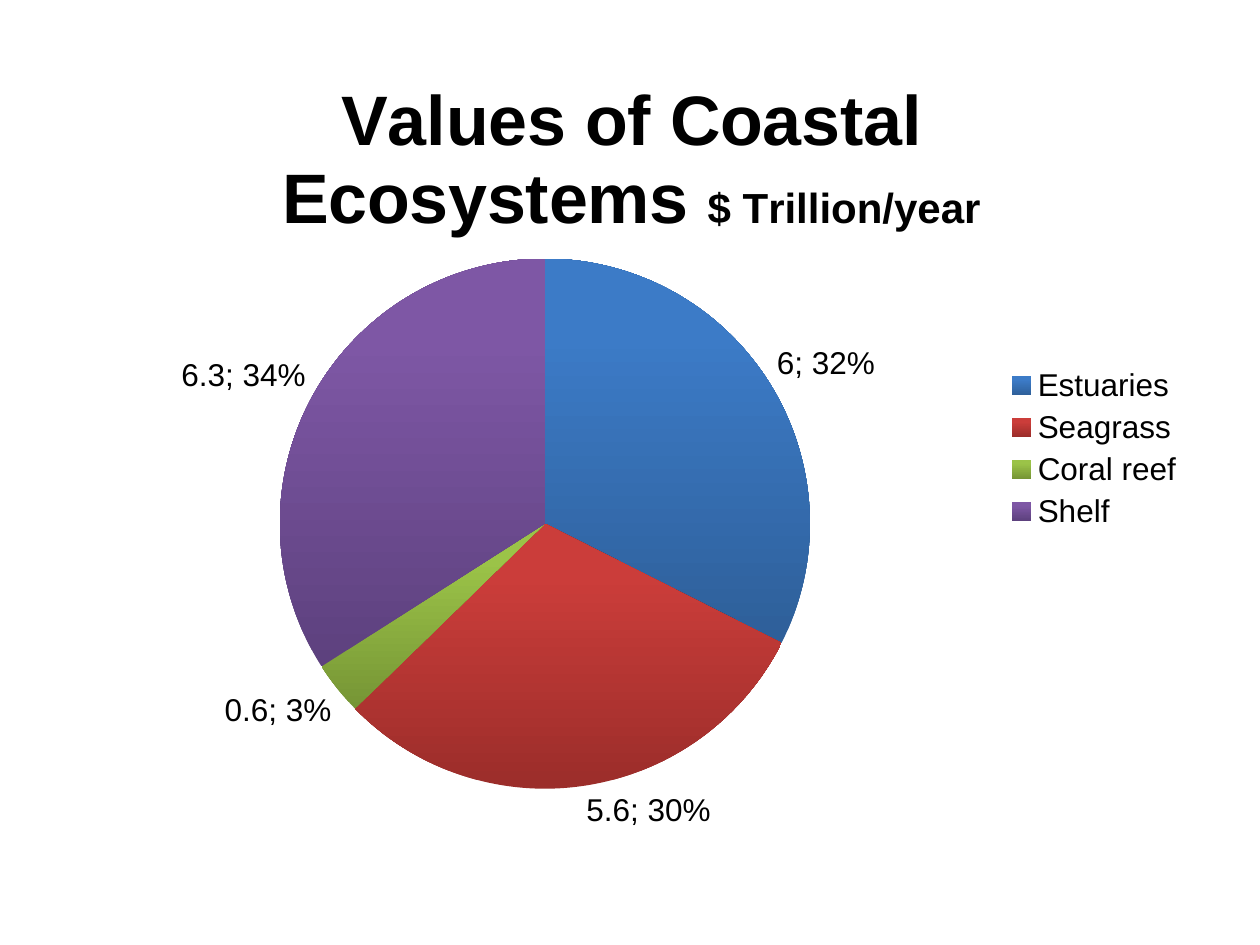
"""Build a slide with a pie chart of the values of coastal ecosystems."""
from dataclasses import dataclass

from lxml.etree import SubElement
from pptx import Presentation
from pptx.chart.chart import Chart
from pptx.chart.data import CategoryChartData
from pptx.dml.color import RGBColor
from pptx.enum.chart import XL_CHART_TYPE, XL_LABEL_POSITION, XL_LEGEND_POSITION
from pptx.oxml.ns import qn
from pptx.util import Inches, Pt

BLACK = RGBColor(0x00, 0x00, 0x00)
FONT = "Arial"


@dataclass
class Ecosystem:
    name: str
    value: float
    dark: RGBColor
    light: RGBColor


ECOSYSTEMS = [
    Ecosystem("Estuaries", 6, RGBColor(0x2E, 0x5F, 0x99), RGBColor(0x3C, 0x7B, 0xC7)),
    Ecosystem("Seagrass", 5.6, RGBColor(0x9B, 0x2D, 0x2A), RGBColor(0xCB, 0x3D, 0x3A)),
    Ecosystem("Coral reef", 0.6, RGBColor(0x76, 0x95, 0x35), RGBColor(0x9B, 0xC3, 0x48)),
    Ecosystem("Shelf", 6.3, RGBColor(0x5D, 0x41, 0x7E), RGBColor(0x7E, 0x57, 0xA5)),
]


def place(parent, index: int, **settings: str | float) -> None:
    """Give a chart part a manual layout as fractions of the chart."""
    for old in parent.findall(qn("c:layout")):
        parent.remove(old)
    layout = SubElement(parent, qn("c:layout"))
    parent.insert(index, layout)
    manual = SubElement(layout, qn("c:manualLayout"))
    for name, value in settings.items():
        SubElement(manual, qn(f"c:{name}")).set("val", str(value))


def add_title(chart: Chart) -> None:
    """Write the title with its smaller unit."""
    paragraph = chart.chart_title.text_frame.paragraphs[0]
    for text, size in (("Values of Coastal Ecosystems ", 40), ("$ Trillion/year", 24)):
        span = paragraph.add_run()
        span.text = text
        span.font.name = FONT
        span.font.size = Pt(size)
        span.font.bold = True
        span.font.color.rgb = BLACK
    chart.chart_title.include_in_layout = False
    place(chart.chart_title._element, 1, xMode="edge", yMode="edge", x=0.19, y=0.03)


def color_slices(chart: Chart) -> None:
    """Shade each slice from dark at the bottom to light at the top."""
    points = chart.plots[0].series[0].points
    for index, ecosystem in enumerate(ECOSYSTEMS):
        fill = points[index].format.fill
        fill.gradient()
        fill.gradient_angle = 90
        dark, light = fill.gradient_stops
        dark.color.rgb, dark.position = ecosystem.dark, 0
        light.color.rgb, light.position = ecosystem.light, 0.8


def add_labels(chart: Chart) -> None:
    """Show value and percentage outside each slice."""
    labels = chart.plots[0].series[0].data_labels
    labels.show_value = True
    labels.show_percentage = True
    labels.position = XL_LABEL_POSITION.OUTSIDE_END
    labels.font.name = FONT
    labels.font.size = Pt(18)
    labels.font.color.rgb = BLACK
    separator = SubElement(labels._element, qn("c:separator"))
    separator.text = "; "
    labels._element.find(qn("c:showBubbleSize")).addnext(separator)


def add_legend(chart: Chart) -> None:
    """List the ecosystems to the right of the pie."""
    chart.has_legend = True
    chart.legend.position = XL_LEGEND_POSITION.RIGHT
    chart.legend.include_in_layout = False
    chart.legend.font.name = FONT
    chart.legend.font.size = Pt(18)
    chart.legend.font.color.rgb = BLACK


def main() -> None:
    """Create and save the deck."""
    deck = Presentation()
    deck.slide_width, deck.slide_height = Inches(10), Inches(7.5)
    page = deck.slides.add_slide(deck.slide_layouts[6])
    values = CategoryChartData()
    values.categories = [ecosystem.name for ecosystem in ECOSYSTEMS]
    values.add_series("Series 1", [ecosystem.value for ecosystem in ECOSYSTEMS])
    chart = page.shapes.add_chart(
        XL_CHART_TYPE.PIE, Inches(0.5), Inches(0.42), Inches(9), Inches(6.28), values
    ).chart
    chart.font.name = "Calibri"
    chart.font.size = Pt(18)
    chart.font.color.rgb = BLACK
    chart.plots[0].vary_by_categories = True
    add_title(chart)
    color_slices(chart)
    add_labels(chart)
    add_legend(chart)
    plot_area = chart._chartSpace.chart.plotArea
    place(plot_area, 0, layoutTarget="inner", xMode="edge", yMode="edge",
          x=0.19, y=0.26, w=0.47, h=0.67)
    deck.save("out.pptx")


if __name__ == "__main__":
    main()
